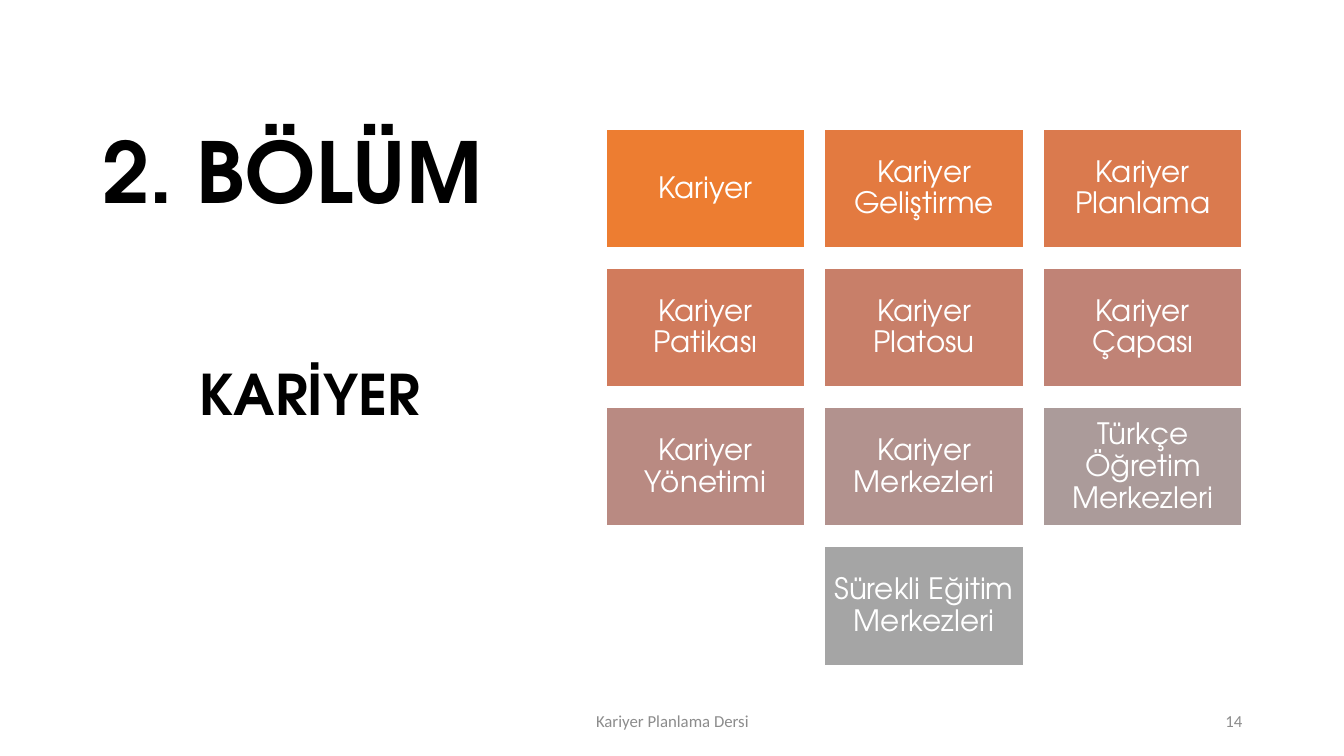
"""Build the section slide that lists the career topics as a grid of tiles."""
from dataclasses import dataclass

from pptx import Presentation
from pptx.dml.color import RGBColor
from pptx.enum.shapes import MSO_SHAPE
from pptx.enum.text import MSO_ANCHOR, PP_ALIGN
from pptx.util import Inches, Pt

RECTANGLE = MSO_SHAPE.RECTANGLE
MIDDLE, BOTTOM = MSO_ANCHOR.MIDDLE, MSO_ANCHOR.BOTTOM
LEFT, CENTER, RIGHT = PP_ALIGN.LEFT, PP_ALIGN.CENTER, PP_ALIGN.RIGHT

BLACK = RGBColor(0x00, 0x00, 0x00)
WHITE = RGBColor(0xFF, 0xFF, 0xFF)
FOOTER_GRAY = RGBColor(0x8C, 0x8C, 0x8C)
ORANGE = RGBColor(0xED, 0x7D, 0x31)
PUMPKIN = RGBColor(0xE3, 0x7A, 0x40)
CORAL = RGBColor(0xDA, 0x7A, 0x4E)
TERRACOTTA = RGBColor(0xD1, 0x7B, 0x5C)
CLAY = RGBColor(0xC8, 0x7F, 0x69)
ROSE = RGBColor(0xC0, 0x83, 0x76)
DUSTY_ROSE = RGBColor(0xB9, 0x8A, 0x82)
MAUVE = RGBColor(0xB2, 0x92, 0x8E)
TAUPE = RGBColor(0xAB, 0x9B, 0x9A)
GRAY = RGBColor(0xA5, 0xA5, 0xA5)

HEADING_FONT, FOOTER_FONT = "TeX Gyre Adventor", "Calibri"
SLIDE_WIDTH, SLIDE_HEIGHT = 13.33, 7.5
GRID_LEFT, GRID_TOP = 6.01, 1.28
COLUMN_STEP, ROW_STEP = 2.17, 1.38
TILE_WIDTH, TILE_HEIGHT = 1.97, 1.18
TILE_INSET = 0.09


@dataclass(frozen=True)
class TextStyle:
    font: str
    size: int
    color: RGBColor
    align: PP_ALIGN
    anchor: MSO_ANCHOR = MIDDLE
    bold: bool = False
    line_spacing: float = 0.9


@dataclass(frozen=True)
class Label:
    text: str
    left: float
    top: float
    width: float
    height: float
    style: TextStyle


@dataclass(frozen=True)
class Tile:
    text: str
    column: int
    row: int
    fill: RGBColor


TITLE = TextStyle(HEADING_FONT, 60, BLACK, LEFT, BOTTOM, True)
SUBTITLE = TextStyle(HEADING_FONT, 40, BLACK, CENTER, bold=True)
TOPIC = TextStyle(HEADING_FONT, 21, WHITE, CENTER)
FOOTER = TextStyle(FOOTER_FONT, 12, FOOTER_GRAY, CENTER, line_spacing=1.0)
PAGE_NUMBER = TextStyle(FOOTER_FONT, 12, FOOTER_GRAY, RIGHT, line_spacing=1.0)

LABELS = [
    Label("2. BÖLÜM", 0.92, 0.5, 4.3, 1.75, TITLE),
    Label("KARİYER", 0.92, 2.59, 4.3, 2.71, SUBTITLE),
    Label("Kariyer Planlama Dersi", 4.42, 6.95, 4.5, 0.4, FOOTER),
    Label("14", 9.42, 6.95, 3, 0.4, PAGE_NUMBER),
]

TILES = [
    Tile("Kariyer", 0, 0, ORANGE),
    Tile("Kariyer Geliştirme", 1, 0, PUMPKIN),
    Tile("Kariyer Planlama", 2, 0, CORAL),
    Tile("Kariyer Patikası", 0, 1, TERRACOTTA),
    Tile("Kariyer Platosu", 1, 1, CLAY),
    Tile("Kariyer Çapası", 2, 1, ROSE),
    Tile("Kariyer Yönetimi", 0, 2, DUSTY_ROSE),
    Tile("Kariyer Merkezleri", 1, 2, MAUVE),
    Tile("Türkçe Öğretim Merkezleri", 2, 2, TAUPE),
    Tile("Sürekli Eğitim Merkezleri", 1, 3, GRAY),
]


def write_text(frame, text: str, style: TextStyle) -> None:
    frame.text = text
    frame.word_wrap = True
    frame.vertical_anchor = style.anchor
    paragraph = frame.paragraphs[0]
    paragraph.alignment = style.align
    paragraph.line_spacing = style.line_spacing
    font = paragraph.runs[0].font
    font.name = style.font
    font.size = Pt(style.size)
    font.bold = style.bold
    font.color.rgb = style.color


def draw_label(slide, label: Label) -> None:
    area = map(Inches, (label.left, label.top, label.width, label.height))
    write_text(slide.shapes.add_textbox(*area).text_frame, label.text, label.style)


def draw_tile(slide, tile: Tile) -> None:
    topic = slide.shapes.add_shape(
        RECTANGLE,
        Inches(GRID_LEFT + tile.column * COLUMN_STEP),
        Inches(GRID_TOP + tile.row * ROW_STEP),
        Inches(TILE_WIDTH),
        Inches(TILE_HEIGHT),
    )
    topic.shadow.inherit = False
    topic.fill.solid()
    topic.fill.fore_color.rgb = tile.fill
    topic.line.color.rgb = WHITE
    topic.line.width = Pt(1)
    frame = topic.text_frame
    frame.margin_left = frame.margin_right = Inches(TILE_INSET)
    frame.margin_top = frame.margin_bottom = Inches(TILE_INSET)
    write_text(frame, tile.text, TOPIC)


def main() -> None:
    presentation = Presentation()
    presentation.slide_width = Inches(SLIDE_WIDTH)
    presentation.slide_height = Inches(SLIDE_HEIGHT)
    slide = presentation.slides.add_slide(presentation.slide_layouts[6])
    for tile in TILES:
        draw_tile(slide, tile)
    for label in LABELS:
        draw_label(slide, label)
    presentation.save("out.pptx")


if __name__ == "__main__":
    main()
